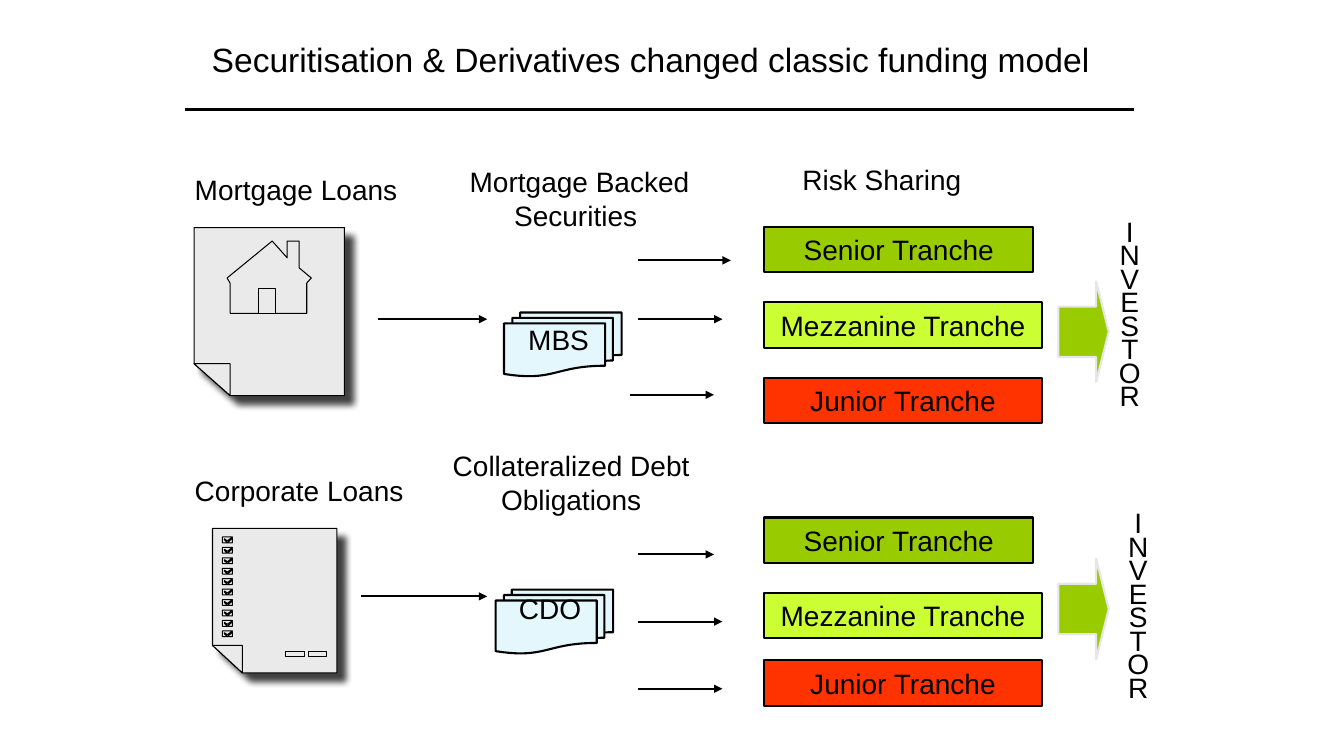
"""Build the slide on how loans are pooled, cut into tranches and sold."""
from dataclasses import dataclass

from lxml import etree
from pptx import Presentation
from pptx.dml.color import RGBColor
from pptx.enum.shapes import MSO_CONNECTOR, MSO_SHAPE
from pptx.enum.text import MSO_ANCHOR, MSO_AUTO_SIZE, PP_ALIGN
from pptx.oxml import parse_xml
from pptx.oxml.ns import nsdecls, qn
from pptx.util import Inches, Pt

LEFT, MID = PP_ALIGN.LEFT, PP_ALIGN.CENTER
TOP, MIDDLE = MSO_ANCHOR.TOP, MSO_ANCHOR.MIDDLE
NO_FIT = MSO_AUTO_SIZE.NONE
STRAIGHT = MSO_CONNECTOR.STRAIGHT
RECT, ARROW = MSO_SHAPE.RECTANGLE, MSO_SHAPE.RIGHT_ARROW
STACK = MSO_SHAPE.FLOWCHART_MULTIDOCUMENT

BLACK = RGBColor(0x00, 0x00, 0x00)
GREEN = RGBColor(0x99, 0xCC, 0x00)
LIME = RGBColor(0xCC, 0xFF, 0x33)
RED = RGBColor(0xFF, 0x33, 0x00)
ICE = RGBColor(0xE4, 0xF7, 0xFC)
PAPER = RGBColor(0xEA, 0xEA, 0xEA)
SILVER = RGBColor(0xE7, 0xE6, 0xE6)

COLS, ROWS = 160, 90
CELL = Inches(1 / 12)
FONT = "Arial"
Points = list[tuple[float, float]]


@dataclass(frozen=True)
class Box:
    """A frame in columns and rows of the grid."""
    x: float
    y: float
    w: float
    h: float

    def frame(self) -> list[int]:
        """Give the frame as lengths."""
        return [round(n * CELL) for n in (self.x, self.y, self.w, self.h)]

    def inset(self, x: float, y: float, w: float, h: float) -> "Box":
        """Cut out a frame given as shares of this one."""
        return Box(self.x + x * self.w, self.y + y * self.h, w * self.w, h * self.h)


@dataclass(frozen=True)
class Label:
    """A text with its frame."""
    text: str
    box: Box
    align: PP_ALIGN = MID
    space: float = 1.0


@dataclass(frozen=True)
class Block:
    """A filled shape, with or without text."""
    kind: MSO_SHAPE
    box: Box
    fill: RGBColor
    line: RGBColor = BLACK
    text: str = ""


@dataclass(frozen=True)
class Flow:
    """A level line from one column to another."""
    start: float
    end: float
    row: float


TITLE = Label("Securitisation & Derivatives changed classic funding model",
              Box(24, 4, 110, 6), LEFT)
BUYER = "\n".join("INVESTOR")
LABELS = [
    Label("Mortgage Loans", Box(22, 20, 31, 5.2), LEFT),
    Label("Corporate Loans", Box(22, 55.8, 31, 5.2), LEFT),
    Label("Risk Sharing", Box(87, 18.8, 36, 5.2)),
    Label("Mortgage Backed Securities ", Box(50, 19, 38, 9.2)),
    Label("Collateralized Debt Obligations", Box(49, 52.8, 38, 9.2)),
    Label("MBS", Box(61, 37.8, 11, 5.2)),
    Label("CDO", Box(60, 69.8, 11, 5.2)),
    Label(BUYER, Box(130, 26, 9, 26.9), MID, 0.7),
    Label(BUYER, Box(131, 60.7, 9, 26.9), MID, 0.7),
]
KINDS = [("Senior Tranche", 32, GREEN), ("Mezzanine Tranche", 33, LIME),
         ("Junior Tranche", 33, RED)]
TIERS = [(27, 36, 45), (61.6, 70.6, 78.6)]
BLOCKS = [Block(RECT, Box(91, row, width, 5.4), fill, BLACK, text)
          for rows in TIERS for row, (text, width, fill) in zip(rows, KINDS)]
BLOCKS += [Block(STACK, Box(x, y, 14, 7.6), ICE) for x, y in [(60, 37.2), (59, 70.2)]]
BLOCKS += [Block(ARROW, Box(126, y, 6, 12), GREEN, SILVER) for y in (33.5, 66.5)]
RULE = Flow(22, 135, 13)
FLOWS = [Flow(45, 58, 38), Flow(43, 58, 71),
         Flow(76, 87, 31), Flow(76, 86, 38), Flow(75, 85, 47),
         Flow(76, 85, 66), Flow(76, 86, 74), Flow(76, 86, 82)]

HOME = Box(23.1, 27.1, 17.9, 20)
FORM = Box(25.3, 62.9, 14.8, 17.2)
FULL: Points = [(0, 0), (1, 0), (1, 1), (0, 1)]
SHEET: Points = [(0, 0), (1, 0), (1, 1), (0.24, 1), (0, 0.81)]
FOLD: Points = [(0, 0.81), (0.24, 0.81), (0.24, 1)]
HOUSE: Points = [(0.24, 0.33), (0.24, 0.51), (0.75, 0.51), (0.75, 0.33), (0.78, 0.3),
                 (0.7, 0.24), (0.7, 0.08), (0.62, 0.08), (0.62, 0.18), (0.52, 0.08),
                 (0.22, 0.3)]
DOOR: Points = [(0.43, 0.51), (0.43, 0.36), (0.54, 0.36), (0.54, 0.51)]
TICK: Points = [(0, 0), (1, 0), (0.5, 0.67), (0.2, 0.33), (0.2, 0.5), (0.5, 1),
                (1, 0.2), (1, 1), (0, 1)]


def write(shape, label: Label, size: int = 20, anchor: MSO_ANCHOR = TOP) -> None:
    """Fill a shape with one run for each line of text."""
    frame = shape.text_frame
    frame.word_wrap, frame.auto_size = True, NO_FIT
    frame.vertical_anchor = anchor
    for i, line in enumerate(label.text.split("\n")):
        para = frame.add_paragraph() if i else frame.paragraphs[0]
        para.alignment, para.line_spacing = label.align, label.space
        run = para.add_run()
        run.text = line
        run.font.name, run.font.size = FONT, Pt(size)
        run.font.color.rgb = BLACK


def paint(shape, fill: RGBColor, line: RGBColor, width: float) -> None:
    """Set fill and line, and drop the shadow."""
    shape.shadow.inherit = False
    shape.fill.solid()
    shape.fill.fore_color.rgb = fill
    shape.line.color.rgb = line
    shape.line.width = Pt(width)


def add_block(slide, block: Block) -> None:
    """Draw a filled shape."""
    shape = slide.shapes.add_shape(block.kind, *block.box.frame())
    paint(shape, block.fill, block.line, 1.5)
    if block.kind == ARROW:
        shape.adjustments[0], shape.adjustments[1] = 0.5, 0.25
    if block.text:
        write(shape, Label(block.text, block.box), anchor=MIDDLE)


def add_flow(slide, flow: Flow, width: float = 1.5, head: bool = True) -> None:
    """Draw a level line, with an arrowhead if asked."""
    x, y, end = (round(n * CELL) for n in (flow.start, flow.row, flow.end))
    line = slide.shapes.add_connector(STRAIGHT, x, y, end, y)
    line.line.color.rgb, line.line.width = BLACK, Pt(width)
    props = line._element.spPr
    if head:
        etree.SubElement(props.find(qn("a:ln")), qn("a:tailEnd"), type="triangle")
    etree.SubElement(props, qn("a:effectLst"))


def add_form(slide, box: Box, points: Points, shade: bool = False) -> None:
    """Draw a closed outline whose points are shares of a frame."""
    x, y, w, h = box.frame()
    spots = [(x + a * w, y + b * h) for a, b in points]
    pen = slide.shapes.build_freeform(*spots[0])
    pen.add_line_segments(spots[1:], close=True)
    shape = pen.convert_to_shape()
    paint(shape, PAPER, BLACK, 0.75)
    if shade:
        shape._element.spPr.find(qn("a:effectLst")).append(parse_xml(
            f'<a:outerShdw {nsdecls("a")} blurRad="{Pt(5)}" dist="{Pt(8.5)}" '
            'dir="2700000" algn="tl" rotWithShape="0"><a:srgbClr val="000000">'
            '<a:alpha val="75000"/></a:srgbClr></a:outerShdw>'))


def main() -> None:
    """Build and save the deck."""
    deck = Presentation()
    deck.slide_width, deck.slide_height = COLS * CELL, ROWS * CELL
    slide = deck.slides.add_slide(deck.slide_layouts[5])
    title = slide.shapes.title
    title.left, title.top, title.width, title.height = TITLE.box.frame()
    write(title, TITLE, 24)
    add_flow(slide, RULE, 2, False)

    for sheet in (HOME, FORM):
        add_form(slide, sheet, SHEET, True)
        add_form(slide, sheet, FOLD)
    for points in (HOUSE, DOOR):
        add_form(slide, HOME, points)
    for x in (0.59, 0.77):
        add_form(slide, FORM.inset(x, 0.85, 0.15, 0.04), FULL)
    for i in range(10):
        add_form(slide, FORM.inset(0.08, 0.06 + i * 0.65 / 9, 0.08, 0.04), TICK)

    for block in BLOCKS:
        add_block(slide, block)
    for flow in FLOWS:
        add_flow(slide, flow)
    for label in LABELS:
        write(slide.shapes.add_textbox(*label.box.frame()), label)
    deck.save("out.pptx")


if __name__ == "__main__":
    main()
